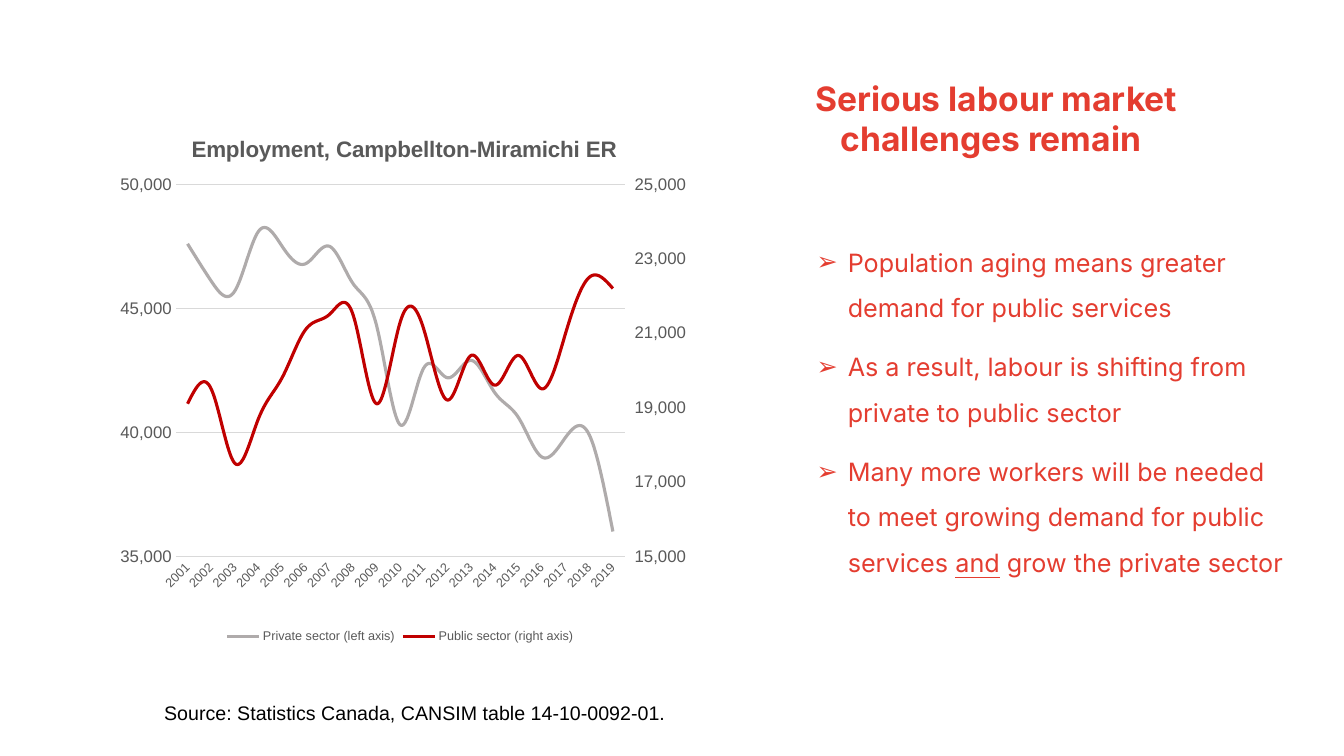
from copy import deepcopy
from dataclasses import dataclass

from lxml import etree
from pptx import Presentation
from pptx import util as u
from pptx.chart import axis as ax
from pptx.chart import data as cd
from pptx.dml.color import RGBColor
from pptx.enum import chart as ce
from pptx.enum import text as te
from pptx.oxml import parse_xml
from pptx.oxml.ns import nsdecls, qn


@dataclass(frozen=True)
class Theme:
    accent: str = "E43D30"
    ink: str = "000000"
    label: str = "595959"
    grid: str = "D9D9D9"
    private: str = "AFABAB"
    public: str = "C00000"
    heading_font: str = "Inter"
    chart_font: str = "Arial"
    heading: int = 24
    body: int = 18
    chart_title: int = 16
    source: int = 14
    values: int = 12
    base: int = 10
    small: int = 9


@dataclass(frozen=True)
class Region:
    column: float
    row: float
    columns: float
    rows: float

    def box(self) -> tuple[int, int, int, int]:
        return tuple(u.Inches(n * CELL) for n in
                     (self.column, self.row, self.columns, self.rows))


@dataclass(frozen=True)
class Sector:
    name: str
    colour: str
    employment: tuple[int, ...]


@dataclass(frozen=True)
class Scale:
    low: int
    high: int
    step: int


THEME = Theme()
CELL = 0.1
HEADING = Region(77.4, 7.2, 50.9, 13)
POINTS = Region(77.5, 22.5, 50.9, 43.3)
CHART = Region(10.4, 10.8, 58.6, 53.5)
SOURCE = Region(15.3, 69, 89.7, 3.4)

YEARS = [str(year) for year in range(2001, 2020)]
SECTORS = (
    Sector("Private sector (left axis)", THEME.private,
           (47600, 46100, 45700, 48100, 47500, 46800, 47500, 46000, 44300, 40300,
            42600, 42200, 42900, 41600, 40600, 39000, 39800, 39900, 36000)),
    Sector("Public sector (right axis)", THEME.public,
           (19100, 19500, 17500, 18700, 19800, 21100, 21500, 21500, 19100, 21300,
            21100, 19200, 20400, 19600, 20400, 19500, 21000, 22500, 22200)),
)
LEFT_SCALE = Scale(35000, 50000, 5000)
RIGHT_SCALE = Scale(15000, 25000, 2000)


def set_font(font, size: int, colour: str, face: str, bold: bool = False) -> None:
    font.size, font.name, font.bold = u.Pt(size), face, bold
    font.color.rgb = RGBColor.from_string(colour)


def add_text(slide, region: Region, paragraphs, *, size: int, colour: str, face: str,
             bold: bool = False, margin: float = 0, hanging: float = 0,
             bullet: str = "", spacing: float = 1, before: int = 0,
             underlined: str = "", grow: bool = False) -> None:
    frame = slide.shapes.add_textbox(*region.box()).text_frame
    frame.word_wrap = True
    frame.auto_size = (te.MSO_AUTO_SIZE.SHAPE_TO_FIT_TEXT if grow
                       else te.MSO_AUTO_SIZE.NONE)
    for index, runs in enumerate(paragraphs):
        paragraph = frame.add_paragraph() if index else frame.paragraphs[0]
        properties = paragraph._p.get_or_add_pPr()
        properties.set("marL", str(u.Inches(margin)))
        properties.set("indent", str(-u.Inches(hanging)))
        if bullet:
            tint = etree.SubElement(properties, qn("a:buClr"))
            etree.SubElement(tint, qn("a:srgbClr"), val=colour)
            etree.SubElement(properties, qn("a:buFont"), typeface=THEME.chart_font)
            etree.SubElement(properties, qn("a:buChar"), char=bullet)
        paragraph.line_spacing = spacing
        paragraph.space_before = u.Pt(before if index else 0)
        for words in runs:
            run = paragraph.add_run()
            run.text = words
            set_font(run.font, size, colour, face, bold)
            if words == underlined:
                run.font.underline = True


def layout(x: float, y: float, width: float = 0, height: float = 0):
    target = '<c:layoutTarget val="inner"/>' if width else ""
    extent = f'<c:w val="{width}"/><c:h val="{height}"/>' if width else ""
    return parse_xml(
        f'<c:layout {nsdecls("c")}><c:manualLayout>{target}'
        '<c:xMode val="edge"/><c:yMode val="edge"/>'
        f'<c:x val="{x}"/><c:y val="{y}"/>{extent}</c:manualLayout></c:layout>')


def place(element, new_layout, after: str = "") -> None:
    for old in element.findall(qn("c:layout")):
        element.remove(old)
    if after:
        element.find(qn(after)).addnext(new_layout)
    else:
        element.insert(0, new_layout)


def style_values(axis, scale: Scale, tick) -> None:
    axis.minimum_scale, axis.maximum_scale = scale.low, scale.high
    axis.major_unit = scale.step
    axis.major_tick_mark = tick
    axis.minor_tick_mark = ce.XL_TICK_MARK.NONE
    axis.format.line.fill.background()
    axis.tick_labels.number_format = "#,##0"
    axis.tick_labels.number_format_is_linked = False
    set_font(axis.tick_labels.font, THEME.values, THEME.label, THEME.chart_font)


def split_axes(plot_area):
    left_lines = plot_area.find(qn("c:lineChart"))
    right_lines = deepcopy(left_lines)
    left_lines.addnext(right_lines)
    left_lines.remove(left_lines.findall(qn("c:ser"))[1])
    right_lines.remove(right_lines.findall(qn("c:ser"))[0])
    years = plot_area.find(qn("c:catAx"))
    values = plot_area.find(qn("c:valAx"))
    right_years, right_values = deepcopy(years), deepcopy(values)
    values.addnext(right_values)
    right_values.addnext(right_years)
    renamed = {node.find(qn("c:axId")).get("val"): new
               for node, new in ((years, "5001"), (values, "5002"))}
    for part in (right_lines, right_years, right_values):
        for tag in ("c:axId", "c:crossAx"):
            for node in part.findall(qn(tag)):
                node.set("val", renamed[node.get("val")])
    right_values.find(qn("c:axPos")).set("val", "r")
    return ax.CategoryAxis(right_years), ax.ValueAxis(right_values)


def add_employment_chart(slide) -> None:
    data = cd.CategoryChartData(number_format="#,##0")
    data.categories = YEARS
    for sector in SECTORS:
        data.add_series(sector.name, sector.employment)
    chart = slide.shapes.add_chart(ce.XL_CHART_TYPE.LINE, *CHART.box(), data).chart
    set_font(chart.font, THEME.base, THEME.ink, THEME.chart_font)
    chart.plots[0].vary_by_categories = False
    for line, sector in zip(chart.plots[0].series, SECTORS):
        line.smooth = True
        line.format.line.width = u.Pt(2.25)
        line.format.line.color.rgb = RGBColor.from_string(sector.colour)

    title = chart.chart_title
    title.text_frame.text = "Employment, Campbellton-Miramichi ER"
    set_font(title.text_frame.paragraphs[0].runs[0].font, THEME.chart_title,
             THEME.label, THEME.chart_font, bold=True)
    title.include_in_layout = False
    place(title._element, layout(0.14, 0.04), after="c:tx")

    chart.has_legend = True
    chart.legend.position = ce.XL_LEGEND_POSITION.BOTTOM
    chart.legend.include_in_layout = False
    set_font(chart.legend.font, THEME.small, THEME.label, THEME.chart_font)

    years, values = chart.category_axis, chart.value_axis
    plot_area = years._element.getparent()
    right_years, right_values = split_axes(plot_area)
    right_years.visible = False
    right_years.crosses = ce.XL_AXIS_CROSSES.AUTOMATIC
    right_values.has_major_gridlines = False
    right_years.has_major_gridlines = False
    right_values._element.find(qn("c:crosses")).set("val", "max")
    place(plot_area, layout(0.12, 0.14, 0.76, 0.69))

    style_values(values, LEFT_SCALE, ce.XL_TICK_MARK.NONE)
    style_values(right_values, RIGHT_SCALE, ce.XL_TICK_MARK.OUTSIDE)
    values.has_major_gridlines = True
    years.major_tick_mark = ce.XL_TICK_MARK.NONE
    set_font(years.tick_labels.font, THEME.small, THEME.label, THEME.chart_font)
    years._element.find(qn("c:txPr")).find(qn("a:bodyPr")).set("rot", "-2700000")
    for line in (values.major_gridlines.format.line, years.format.line):
        line.width = u.Pt(0.75)
        line.color.rgb = RGBColor.from_string(THEME.grid)


def main() -> None:
    deck = Presentation()
    deck.slide_width, deck.slide_height = u.Inches(13.33), u.Inches(7.5)
    slide = deck.slides.add_slide(deck.slide_layouts[6])
    add_text(slide, HEADING, [["Serious labour market challenges remain"]],
             size=THEME.heading, colour=THEME.accent, face=THEME.heading_font,
             bold=True, margin=0.5, hanging=0.25)
    add_text(slide, POINTS, [
        ["Population aging means greater demand for public services"],
        ["As a result, labour is shifting from private to public sector"],
        ["Many more workers will be needed to meet growing demand for public services ",
         "and", " grow the private sector"],
    ], size=THEME.body, colour=THEME.accent, face=THEME.heading_font, margin=0.56,
        hanging=0.31, bullet="➢", spacing=1.5, before=10, underlined="and")
    add_employment_chart(slide)
    add_text(slide, SOURCE, [["Source: Statistics Canada, CANSIM table 14-10-0092-01."]],
             size=THEME.source, colour=THEME.ink, face=THEME.chart_font, grow=True)
    deck.save("out.pptx")


if __name__ == "__main__":
    main()
